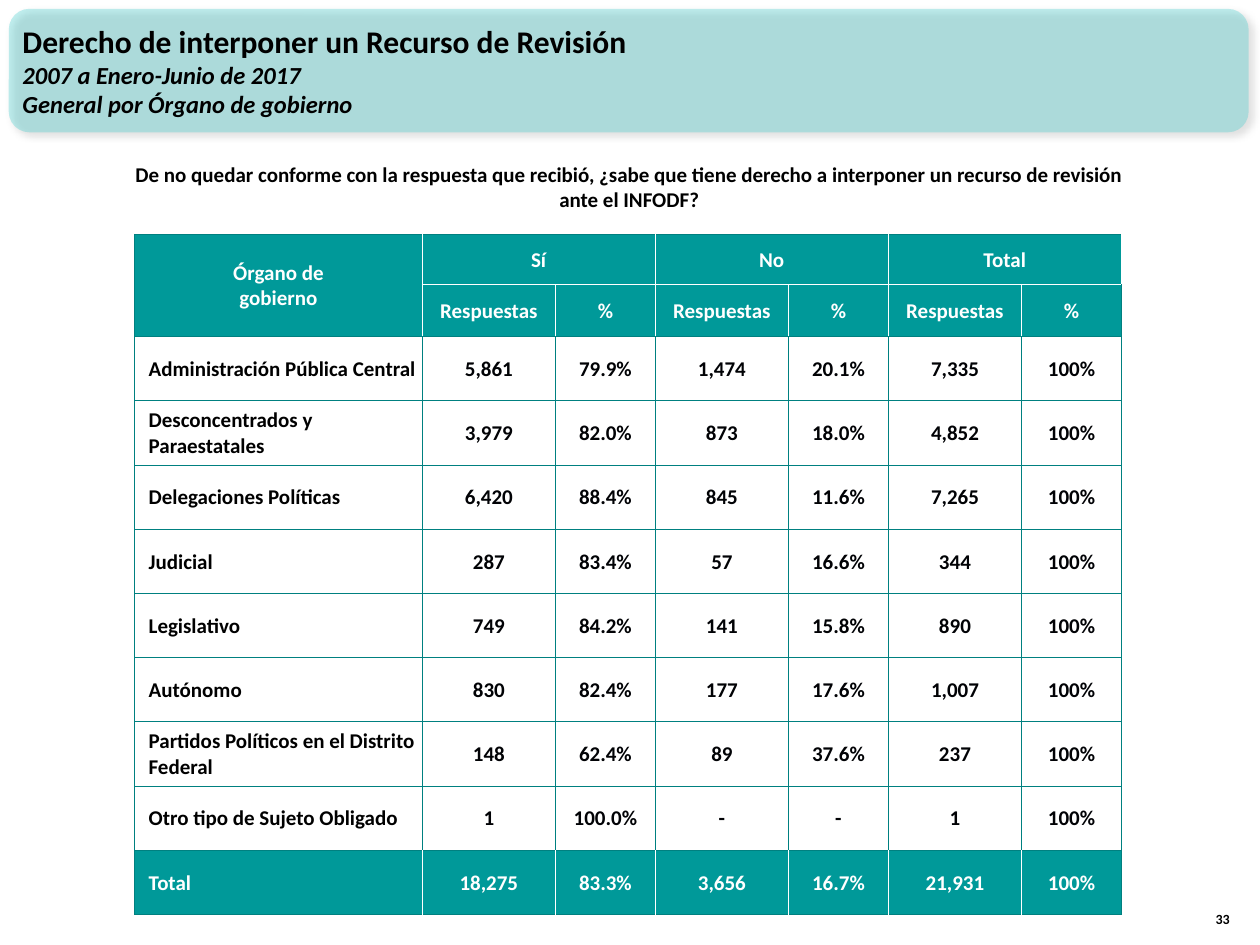
from dataclasses import dataclass

from lxml import etree
from pptx import Presentation
from pptx.dml.color import RGBColor
from pptx.enum.shapes import MSO_SHAPE as Shape
from pptx.enum.text import MSO_ANCHOR as Anchor, PP_ALIGN as Align
from pptx.oxml import parse_xml
from pptx.oxml.ns import nsdecls, qn
from pptx.util import Inches, Pt

UNIT = Inches(0.1)  # the slide is a grid of 100 columns by 75 rows
COLS, ROWS = 100, 75


@dataclass(frozen=True)
class Theme:
    font: str = "Calibri"
    black: str = "000000"
    ink: str = "010205"
    white: str = "FFFFFF"
    teal: str = "009999"
    rule: str = "008080"
    banner: str = "33CCCC"
    title: int = 18
    subtitle: int = 14
    body: int = 12
    number: int = 8
    rule_width: float = 0.5


@dataclass(frozen=True)
class Box:
    x: float
    y: float
    w: float
    h: float

    def emu(self):
        return [round(v * UNIT) for v in (self.x, self.y, self.w, self.h)]


T = Theme()
LABEL_COL = 22.8
ANSWER_COLS = [10.6, 7.9]
HEAD_ROW, DATA_ROW = 4, 5.1
GROUPS = ["Sí", "No", "Total"]
RESULTS = [
    ("Administración Pública Central", "5,861", "79.9%", "1,474", "20.1%", "7,335", "100%"),
    ("Desconcentrados y Paraestatales", "3,979", "82.0%", "873", "18.0%", "4,852", "100%"),
    ("Delegaciones Políticas", "6,420", "88.4%", "845", "11.6%", "7,265", "100%"),
    ("Judicial", "287", "83.4%", "57", "16.6%", "344", "100%"),
    ("Legislativo", "749", "84.2%", "141", "15.8%", "890", "100%"),
    ("Autónomo", "830", "82.4%", "177", "17.6%", "1,007", "100%"),
    ("Partidos Políticos en el Distrito Federal", "148", "62.4%", "89", "37.6%", "237", "100%"),
    ("Otro tipo de Sujeto Obligado", "1", "100.0%", "-", "-", "1", "100%"),
    ("Total", "18,275", "83.3%", "3,656", "16.7%", "21,931", "100%"),
]


def write(tf, lines, size, color=T.black, align=Align.LEFT, italic=False, more=False):
    """Write bold lines, one paragraph each; more=True continues after existing text."""
    for i, line in enumerate(lines):
        p = tf.add_paragraph() if more or i else tf.paragraphs[0]
        p.alignment = align
        r = p.add_run()
        r.text = line
        r.font.name, r.font.size = T.font, Pt(size)
        r.font.bold, r.font.italic = True, italic
        r.font.color.rgb = RGBColor.from_string(color)


def add_text_box(slide, box, anchor=Anchor.TOP):
    tf = slide.shapes.add_textbox(*box.emu()).text_frame
    tf.word_wrap = True
    tf.vertical_anchor = anchor
    return tf


def add_banner(slide, box):
    sp = slide.shapes.add_shape(Shape.ROUNDED_RECTANGLE, *box.emu())
    sp.fill.solid()
    sp.fill.fore_color.rgb = RGBColor.from_string(T.banner)
    sp.line.fill.background()
    color = sp.fill._xPr.find(qn("a:solidFill"))[0]
    etree.SubElement(color, qn("a:alpha"), val="30000")
    sp.shadow.inherit = False
    effects = sp._element.spPr.find(qn("a:effectLst"))
    effects.append(parse_xml(
        f'<a:outerShdw {nsdecls("a")} blurRad="{Pt(4)}" dist="{Pt(3)}" dir="2700000" '
        f'algn="tl" rotWithShape="0"><a:srgbClr val="{T.black}">'
        '<a:alpha val="40000"/></a:srgbClr></a:outerShdw>'))
    tf = add_text_box(slide, Box(box.x + 0.1, box.y + 0.2, 91.7, box.h - 0.4), Anchor.MIDDLE)
    write(tf, ["Derecho de interponer un Recurso de Revisión"], T.title)
    write(tf, ["2007 a Enero-Junio de 2017", "General por Órgano de gobierno"],
          T.subtitle, italic=True, more=True)


def add_question(slide, box):
    write(add_text_box(slide, box),
          ["De no quedar conforme con la respuesta que recibió, ¿sabe que tiene derecho "
           "a interponer un recurso de revisión ante el INFODF?"],
          T.body, align=Align.CENTER)


def add_page_number(slide, box):
    write(add_text_box(slide, box, Anchor.BOTTOM), ["33"], T.number, align=Align.RIGHT)


def set_borders(cell, colors):
    """Draw the left, right, top and bottom rules, in that order."""
    tcPr = cell._tc.get_or_add_tcPr()
    for side, color in zip("LRTB", colors):
        tcPr.append(parse_xml(
            f'<a:ln{side} {nsdecls("a")} w="{Pt(T.rule_width)}"><a:solidFill>'
            f'<a:srgbClr val="{color}"/></a:solidFill></a:ln{side}>'))


def style_cell(cell, r, c, last_row, last_col):
    filled = r < 2 or r == last_row
    inner = T.white if filled else T.rule
    split = T.white if c else T.rule  # between the two header rows
    set_borders(cell, [inner if c else T.rule,
                       inner if c < last_col else T.rule,
                       split if r == 1 else T.rule,
                       split if r == 0 else T.rule])
    if filled:
        cell.fill.solid()
        cell.fill.fore_color.rgb = RGBColor.from_string(T.teal)
    else:
        cell.fill.background()
    cell.vertical_anchor = Anchor.MIDDLE
    cell.margin_left = cell.margin_right = cell.margin_top = Inches(0.01)
    cell.margin_bottom = 0


def add_results_table(slide, box):
    widths = [LABEL_COL] + ANSWER_COLS * len(GROUPS)
    heights = [HEAD_ROW] * 2 + [DATA_ROW] * len(RESULTS)
    last_row, last_col = len(heights) - 1, len(widths) - 1
    table = slide.shapes.add_table(len(heights), len(widths), *box.emu()).table
    table.first_row = table.horz_banding = False
    for col, w in zip(table.columns, widths):
        col.width = round(w * UNIT)
    for row, h in zip(table.rows, heights):
        row.height = round(h * UNIT)
    for r in range(len(heights)):
        for c in range(len(widths)):
            style_cell(table.cell(r, c), r, c, last_row, last_col)

    def put(r, c, lines, color, align=Align.CENTER):
        write(table.cell(r, c).text_frame, lines, T.body, color, align)

    table.cell(0, 0).merge(table.cell(1, 0))
    put(0, 0, ["Órgano de", "gobierno"], T.white)
    for i, group in enumerate(GROUPS):
        c = 1 + 2 * i
        table.cell(0, c).merge(table.cell(0, c + 1))
        put(0, c, [group], T.white)
        put(1, c, ["Respuestas"], T.white)
        put(1, c + 1, ["%"], T.white)
    for r, (label, *values) in enumerate(RESULTS, start=2):
        total = r == last_row
        put(r, 0, [label], T.white if total else T.black, Align.LEFT)
        label_p = table.cell(r, 0).text_frame.paragraphs[0]
        label_p._p.get_or_add_pPr().set("marL", str(Inches(0.1)))
        for c, value in enumerate(values, start=1):
            put(r, c, [value], T.white if total else T.ink)


def main():
    prs = Presentation()
    prs.slide_width, prs.slide_height = COLS * UNIT, ROWS * UNIT
    slide = prs.slides.add_slide(prs.slide_layouts[6])
    add_banner(slide, Box(0.7, 0.7, 98.4, 9.8))
    add_page_number(slide, Box(94.6, 70.1, 4, 4))
    add_results_table(slide, Box(10.7, 18.6, 78.3, 53.9))
    add_question(slide, Box(8.9, 12.3, 82.1, 5))
    prs.save("out.pptx")


if __name__ == "__main__":
    main()
